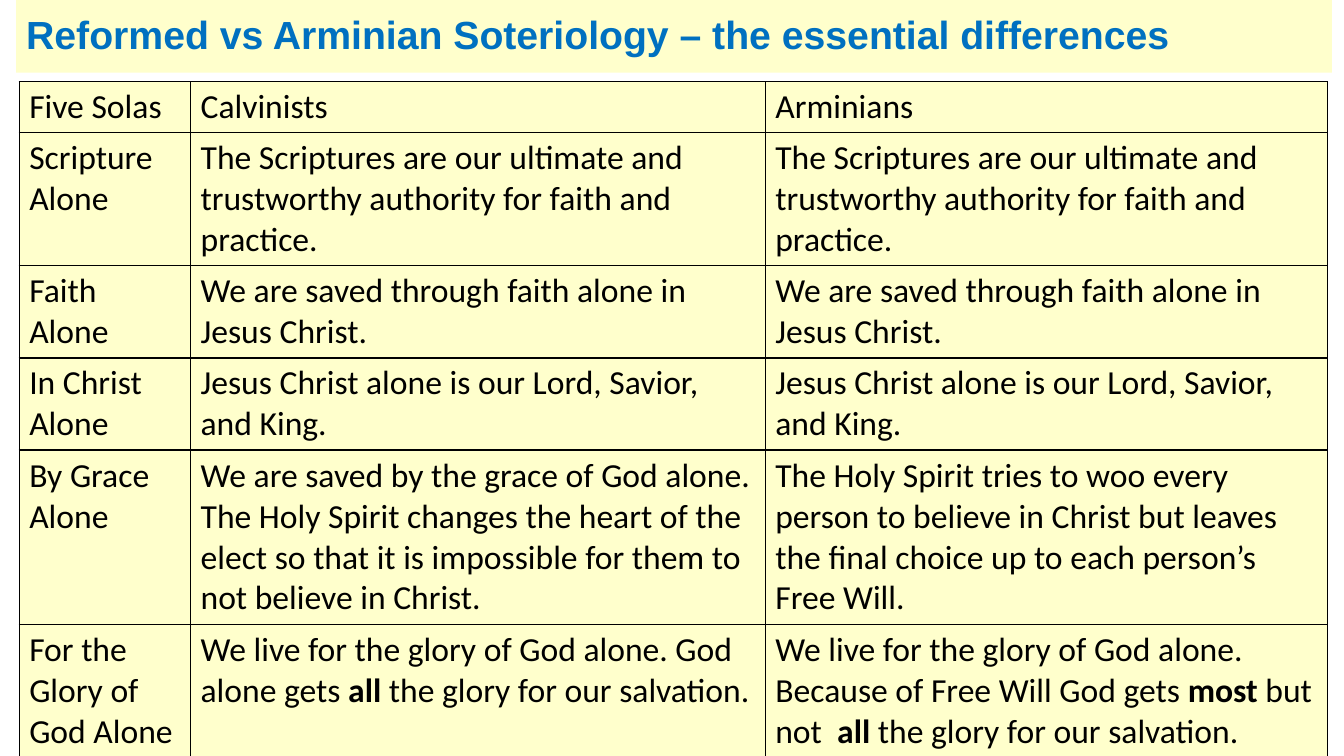
"""Build a slide that compares Reformed and Arminian views of the five solas."""
from lxml.etree import SubElement
from pptx import Presentation
from pptx.dml.color import RGBColor
from pptx.enum.text import MSO_ANCHOR, MSO_AUTO_SIZE, PP_ALIGN
from pptx.oxml.ns import qn
from pptx.util import Inches, Pt

CREAM, BLUE, BLACK = "FFFFCC", "0070C0", "000000"
COLUMN_WIDTHS = [1.7, 5.7, 5.58]
LINE_HEIGHT, CELL_PADDING = 0.405, 0.1
SCRIPTURE = "The Scriptures are our ultimate and trustworthy authority for faith and practice."
FAITH = "We are saved through faith alone in Jesus Christ."
CHRIST = "Jesus Christ alone is our Lord, Savior, and King."
ROWS = [
    (1, "Five Solas", "Calvinists", "Arminians"),
    (3, "Scripture Alone", SCRIPTURE, SCRIPTURE),
    (2, "Faith Alone", FAITH, FAITH),
    (2, "In Christ Alone", CHRIST, CHRIST),
    (4, "By Grace Alone",
     "We are saved by the grace of God alone. The Holy Spirit changes the heart "
     "of the elect so that it is impossible for them to not believe in Christ.",
     "The Holy Spirit tries to woo every person to believe in Christ but leaves "
     "the final choice up to each person’s Free Will."),
    (3, "For the Glory of God Alone",
     "We live for the glory of God alone. God alone gets *all* the glory for our salvation.",
     "We live for the glory of God alone. Because of Free Will God gets *most *but not  "
     "*all* the glory for our salvation."),
]


def paint(color_format, color):
    color_format.rgb = RGBColor.from_string(color)


def add_run(paragraph, text, font_name, size, color, bold):
    run = paragraph.add_run()
    run.text = text
    run.font.name, run.font.size, run.font.bold = font_name, Pt(size), bold
    paint(run.font.color, color)


presentation = Presentation()
presentation.slide_width, presentation.slide_height = Inches(13.33), Inches(7.5)
slide = presentation.slides.add_slide(presentation.slide_layouts[5])

title = slide.shapes.title
title.left, title.top, title.width, title.height = map(Inches, (0.16, 0, 13.05, 0.72))
title.fill.solid()
paint(title.fill.fore_color, CREAM)
title.text_frame.auto_size = MSO_AUTO_SIZE.NONE
title.text_frame.vertical_anchor = MSO_ANCHOR.MIDDLE
heading = title.text_frame.paragraphs[0]
heading.alignment, heading.line_spacing = PP_ALIGN.LEFT, 0.9
add_run(heading, "Reformed vs Arminian Soteriology – the essential differences",
        "Arial", 28, BLUE, True)

row_heights = [lines * LINE_HEIGHT + CELL_PADDING for lines, *_ in ROWS]
table = slide.shapes.add_table(
    len(ROWS), len(COLUMN_WIDTHS), Inches(0.19), Inches(0.81),
    Inches(sum(COLUMN_WIDTHS)), Inches(sum(row_heights))).table
table.first_row = table.horz_banding = False
for column, width in zip(table.columns, COLUMN_WIDTHS):
    column.width = Inches(width)

for row, height, (_, *texts) in zip(table.rows, row_heights, ROWS):
    row.height = Inches(height)
    for cell, text in zip(row.cells, texts):
        paragraph = cell.text_frame.paragraphs[0]
        for position, part in enumerate(text.split("*")):
            add_run(paragraph, part, "Calibri", 24, BLACK, position % 2 == 1)
        properties = cell._tc.get_or_add_tcPr()
        for side in ("a:lnL", "a:lnR", "a:lnT", "a:lnB"):
            border = SubElement(properties, qn(side), w=str(Pt(1)))
            border_fill = SubElement(border, qn("a:solidFill"))
            SubElement(border_fill, qn("a:srgbClr"), val=BLACK)
        cell.fill.solid()
        paint(cell.fill.fore_color, CREAM)

presentation.save("out.pptx")
